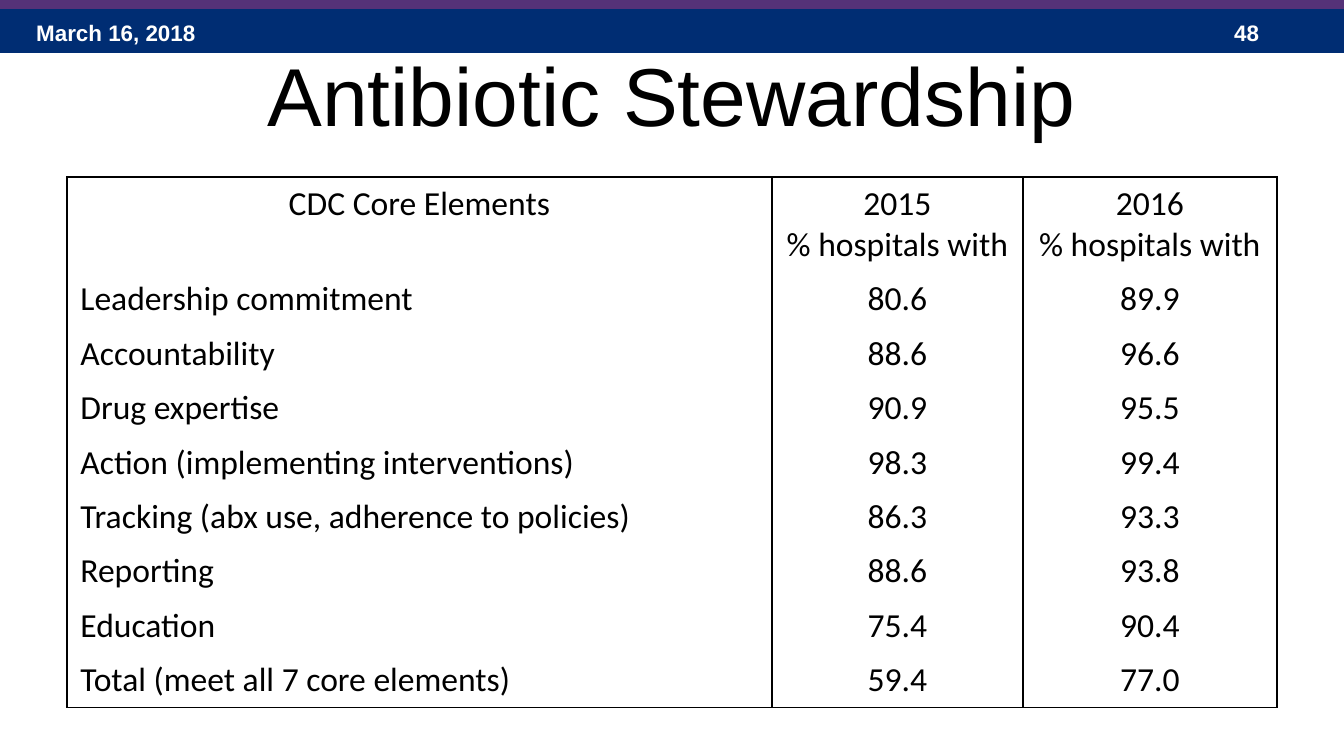
"""Build the Antibiotic Stewardship slide with its table of core elements."""
from lxml import etree
from pptx import Presentation
from pptx import util as u
from pptx.dml.color import RGBColor
from pptx.enum import shapes, text
from pptx.oxml import ns

PX = 9144000 / 1344
NAVY = RGBColor(0x00, 0x2D, 0x73)
PURPLE = RGBColor(0x55, 0x32, 0x78)
WHITE = RGBColor(0xFF, 0xFF, 0xFF)
BLACK = RGBColor(0x00, 0x00, 0x00)
CENTER = text.PP_ALIGN.CENTER
LEFT = text.PP_ALIGN.LEFT


def px(*lengths):
    return [u.Emu(round(length * PX)) for length in lengths]


def style(frame, font, size, color, bold, align):
    for paragraph in frame.paragraphs:
        paragraph.alignment = align
        for run in paragraph.runs:
            run.font.name = font
            run.font.size = u.Pt(size)
            run.font.bold = bold
            run.font.color.rgb = color


deck = Presentation()
deck.slide_width, deck.slide_height = px(1344, 756)
slide = deck.slides.add_slide(deck.slide_layouts[6])

for top, height, color in [(9, 44, NAVY), (-3, 12, PURPLE)]:
    band = slide.shapes.add_shape(shapes.MSO_SHAPE.RECTANGLE, *px(0, top, 1344, height))
    band.shadow.inherit = False
    band.fill.solid()
    band.fill.fore_color.rgb = color
    band.line.fill.background()

labels = [
    ("March 16, 2018", (23, 13, 313, 40), 12, WHITE, True, LEFT, text.MSO_ANCHOR.TOP),
    ("48", (1221, 13, 101, 40), 12, WHITE, True, LEFT, text.MSO_ANCHOR.TOP),
    ("Antibiotic Stewardship", (67, 31, 1210, 126), 44, BLACK, False, CENTER, text.MSO_ANCHOR.MIDDLE),
]
for wording, place, size, color, bold, align, anchor in labels:
    label = slide.shapes.add_textbox(*px(*place)).text_frame
    label.word_wrap = True
    label.vertical_anchor = anchor
    label.text = wording
    style(label, "Arial", size, color, bold, align)

elements = [
    ("CDC Core Elements", "2015\n% hospitals with", "2016\n% hospitals with"),
    ("Leadership commitment", "80.6", "89.9"),
    ("Accountability", "88.6", "96.6"),
    ("Drug expertise", "90.9", "95.5"),
    ("Action (implementing interventions)", "98.3", "99.4"),
    ("Tracking (abx use, adherence to policies)", "86.3", "93.3"),
    ("Reporting", "88.6", "93.8"),
    ("Education", "75.4", "90.4"),
    ("Total (meet all 7 core elements)", "59.4", "77.0"),
]
last = len(elements) - 1
table = slide.shapes.add_table(len(elements), 3, *px(67, 177, 1210, 531)).table
table.first_row = False
table.horz_banding = False
for column, width in zip(table.columns, px(705, 251, 254)):
    column.width = width
for row, height in zip(table.rows, px(95, *[436 / last] * last)):
    row.height = height

for r, entries in enumerate(elements):
    for c, entry in enumerate(entries):
        cell = table.cell(r, c)
        cell.text_frame.text = entry
        style(cell.text_frame, "Calibri", 18, BLACK, False, LEFT if r and not c else CENTER)
        borders = cell._tc.get_or_add_tcPr()
        for side, drawn in [("lnL", True), ("lnR", True), ("lnT", r == 0), ("lnB", r == last)]:
            border = etree.SubElement(borders, ns.qn(f"a:{side}"), w=str(u.Pt(1)))
            if drawn:
                paint = etree.SubElement(border, ns.qn("a:solidFill"))
                etree.SubElement(paint, ns.qn("a:srgbClr"), val=str(BLACK))
            else:
                etree.SubElement(border, ns.qn("a:noFill"))
        cell.fill.background()

deck.save("out.pptx")
